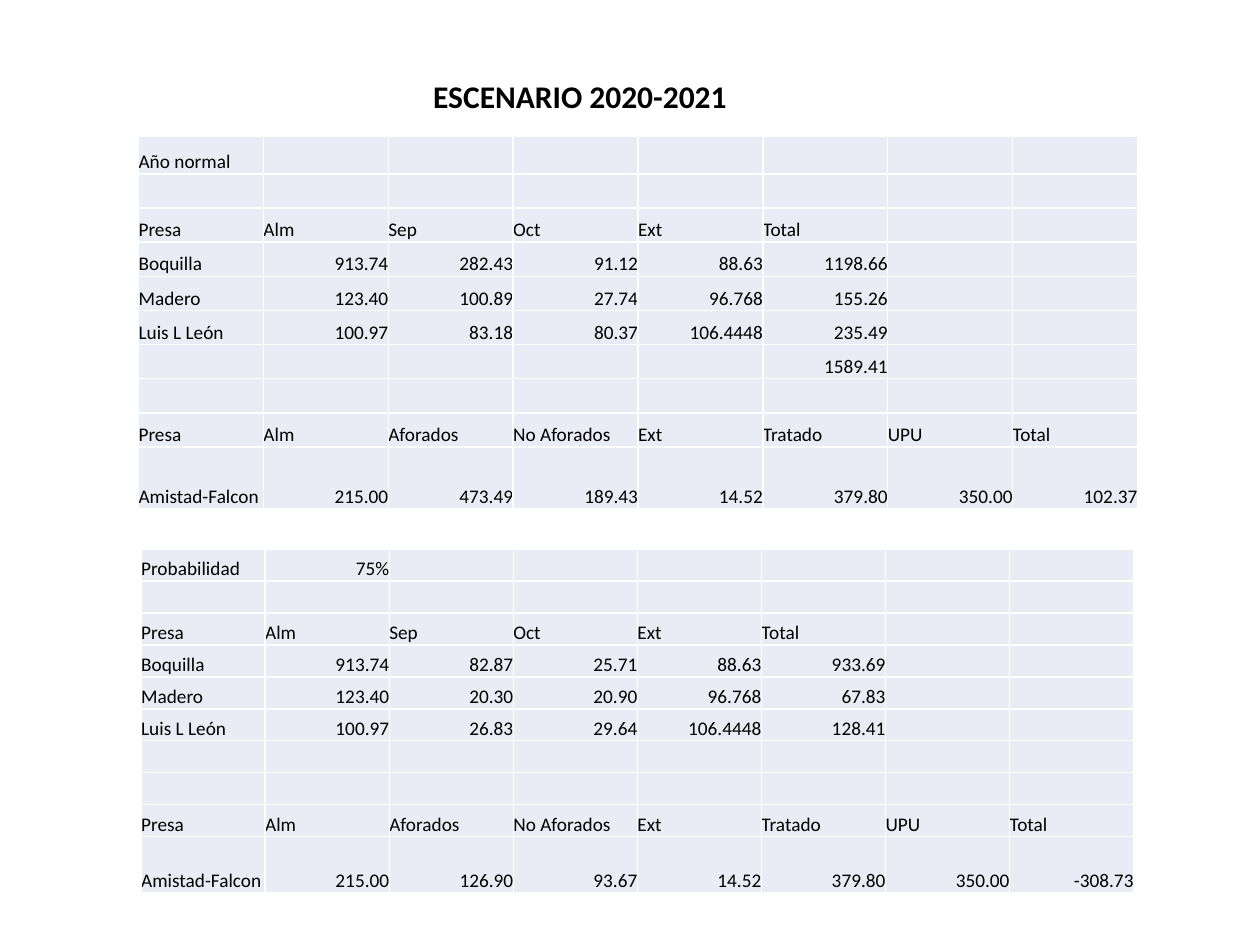
"""Build the ESCENARIO 2020-2021 slide with its two reservoir tables."""
import lxml.etree
import pptx
import pptx.dml.color
import pptx.enum.text
import pptx.oxml.ns
import pptx.util

Inches = pptx.util.Inches
Pt = pptx.util.Pt
PP_ALIGN = pptx.enum.text.PP_ALIGN
COLORS = {"text": "000000", "cell": "E9EBF5", "border": "FFFFFF"}
FONT = "Calibri"
CELL_SIZE = 11
COLUMNS = 8

MONTHS = ["Presa", "Alm", "Sep", "Oct", "Ext", "Total"]
BALANCE = ["Presa", "Alm", "Aforados", "No Aforados", "Ext", "Tratado", "UPU", "Total"]
NORMAL_YEAR = [
    ["Año normal"],
    [],
    MONTHS,
    ["Boquilla", "913.74", "282.43", "91.12", "88.63", "1198.66"],
    ["Madero", "123.40", "100.89", "27.74", "96.768", "155.26"],
    ["Luis L León", "100.97", "83.18", "80.37", "106.4448", "235.49"],
    ["", "", "", "", "", "1589.41"],
    [],
    BALANCE,
    ["Amistad-Falcon", "215.00", "473.49", "189.43", "14.52", "379.80", "350.00", "102.37"],
]
PROBABILITY = [
    ["Probabilidad", "75%"],
    [],
    MONTHS,
    ["Boquilla", "913.74", "82.87", "25.71", "88.63", "933.69"],
    ["Madero", "123.40", "20.30", "20.90", "96.768", "67.83"],
    ["Luis L León", "100.97", "26.83", "29.64", "106.4448", "128.41"],
    [],
    [],
    BALANCE,
    ["Amistad-Falcon", "215.00", "126.90", "93.67", "14.52", "379.80", "350.00", "-308.73"],
]


def rgb(name):
    return pptx.dml.color.RGBColor.from_string(COLORS[name])


def write_text(tf, text, size=CELL_SIZE, bold=False, align=PP_ALIGN.LEFT):
    p = tf.paragraphs[0]
    p.alignment = align
    if not text:
        p._p.get_or_add_endParaRPr().set("sz", str(size * 100))
        return
    r = p.add_run()
    r.text = text
    r.font.name = FONT
    r.font.size = Pt(size)
    r.font.bold = bold
    r.font.color.rgb = rgb("text")


def add_title(s, text, left, top, width, height):
    sp = s.shapes.add_textbox(Inches(left), Inches(top), Inches(width), Inches(height))
    tf = sp.text_frame
    tf.word_wrap = False
    tf.auto_size = pptx.enum.text.MSO_AUTO_SIZE.SHAPE_TO_FIT_TEXT
    write_text(tf, text, size=18, bold=True)


def add_borders(cell):
    qn = pptx.oxml.ns.qn
    tc_pr = cell._tc.get_or_add_tcPr()
    for side in ("lnL", "lnR", "lnT", "lnB"):
        ln = lxml.etree.SubElement(tc_pr, qn(f"a:{side}"), w=str(Pt(1)))
        fill = lxml.etree.SubElement(ln, qn("a:solidFill"))
        lxml.etree.SubElement(fill, qn("a:srgbClr"), val=COLORS["border"])


def format_cell(cell, text):
    cell.margin_left = cell.margin_right = cell.margin_top = cell.margin_bottom = 0
    cell.vertical_anchor = pptx.enum.text.MSO_ANCHOR.BOTTOM
    add_borders(cell)
    cell.fill.solid()
    cell.fill.fore_color.rgb = rgb("cell")
    is_number = text[-1:].isdigit() or text.endswith("%")
    write_text(cell.text_frame, text, align=PP_ALIGN.RIGHT if is_number else PP_ALIGN.LEFT)


def add_data_table(s, rows, left, top, width, height, special_heights):
    frame = s.shapes.add_table(
        len(rows), COLUMNS, Inches(left), Inches(top), Inches(width), Inches(height)
    )
    table = frame.table
    table.first_row = table.horz_banding = False
    regular = (height - sum(special_heights.values())) / (len(rows) - len(special_heights))
    for column in table.columns:
        column.width = Inches(width / COLUMNS)
    for i, values in enumerate(rows):
        table.rows[i].height = Inches(special_heights.get(i, regular))
        for j in range(COLUMNS):
            format_cell(table.cell(i, j), values[j] if j < len(values) else "")


def main():
    prs = pptx.Presentation()
    prs.slide_width, prs.slide_height = Inches(10), Inches(7.5)
    s = prs.slides.add_slide(prs.slide_layouts[6])
    add_title(s, "ESCENARIO 2020-2021", 3.34, 0.56, 2.53, 0.4)
    add_data_table(s, NORMAL_YEAR, 1.1, 1.08, 7.93, 2.96, {0: 0.3, 9: 0.49})
    add_data_table(s, PROBABILITY, 1.12, 4.36, 7.88, 2.73, {9: 0.45})
    prs.save("out.pptx")


if __name__ == "__main__":
    main()
